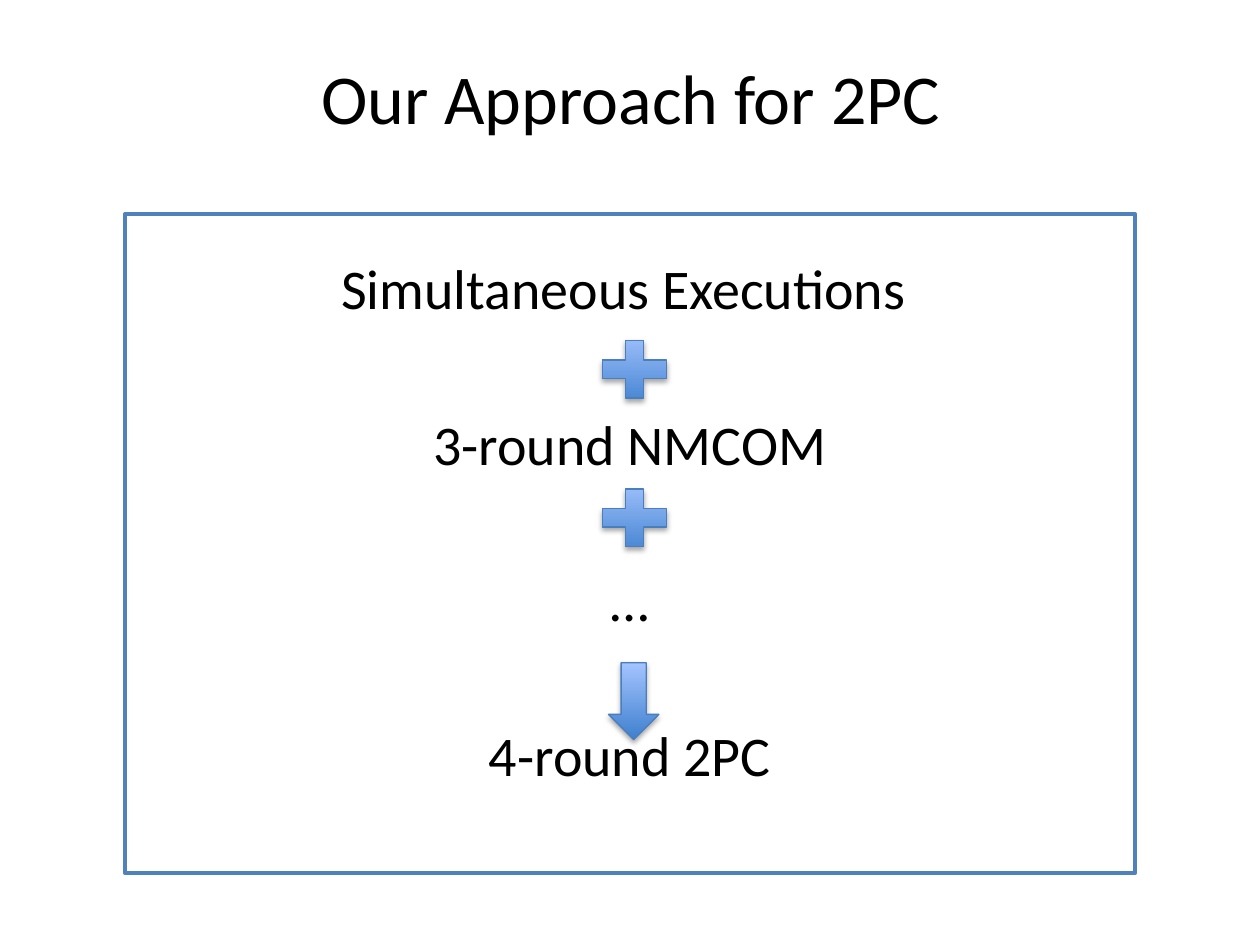
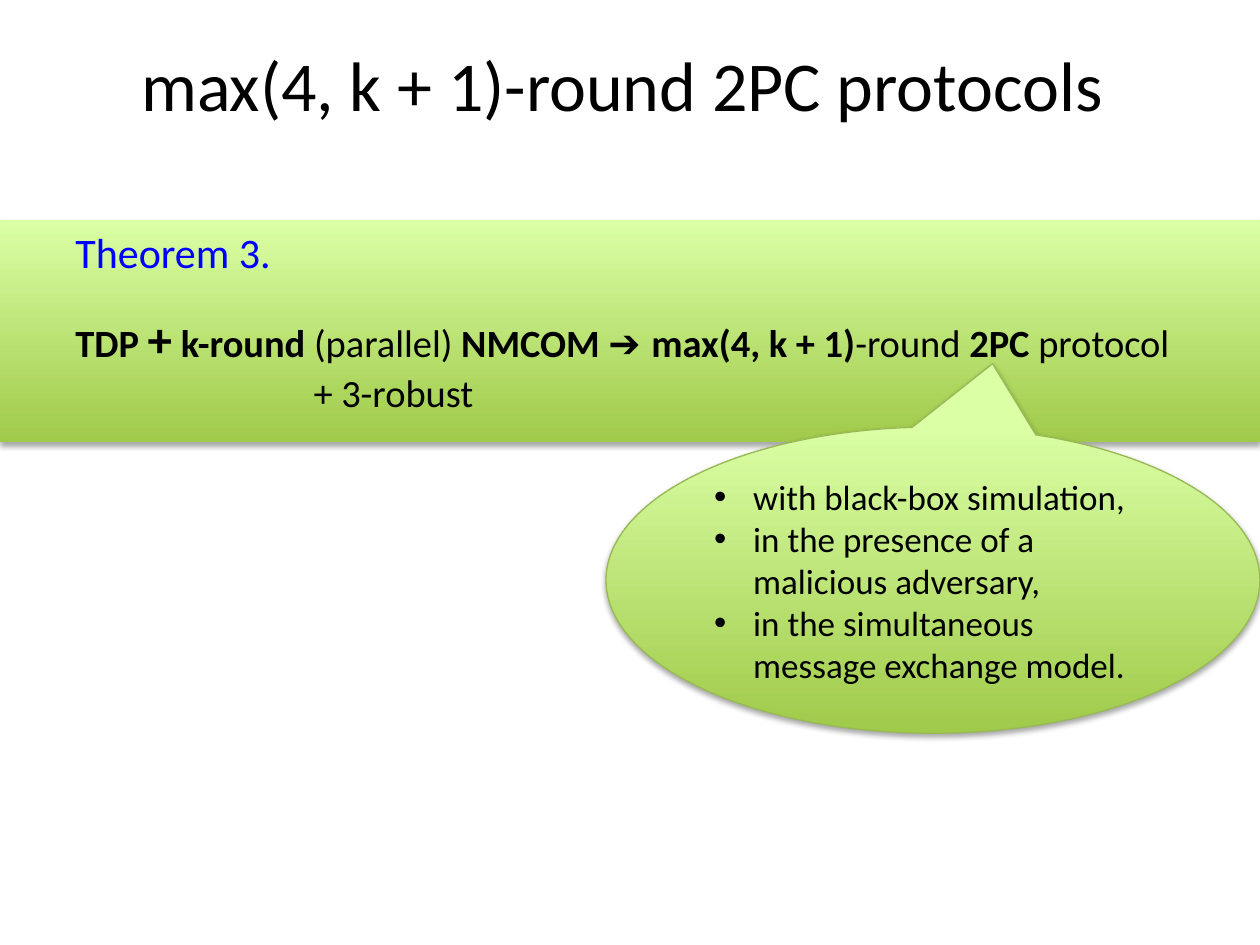
from dataclasses import dataclass

from lxml.etree import SubElement
from pptx import Presentation
from pptx.dml.color import RGBColor as RGB
from pptx.enum.shapes import MSO_SHAPE as Preset
from pptx.enum.text import MSO_ANCHOR as Anchor, PP_ALIGN as Align
from pptx.oxml.ns import qn
from pptx.util import Inches, Pt


@dataclass(frozen=True)
class Theme:
    font: str = "Calibri"
    symbol_font: str = "Arial"
    black: RGB = RGB(0, 0, 0)
    white: RGB = RGB(255, 255, 255)
    theorem_blue: RGB = RGB(0, 0, 255)
    frame_blue: RGB = RGB(0x4F, 0x81, 0xBD)
    blue_line: RGB = RGB(0x4B, 0x7E, 0xBC)
    green_line: RGB = RGB(0x98, 0xB9, 0x55)
    blue_gradient: tuple = (RGB(0x3F, 0x80, 0xCE), RGB(0xA4, 0xC4, 0xFF))
    green_gradient: tuple = (RGB(0xA0, 0xCA, 0x4A), RGB(0xDA, 0xFF, 0xA5))
    title: int = 40
    step: int = 32
    plus: int = 28
    heading: int = 24
    statement: int = 22
    callout: int = 20


theme = Theme()


def write(text_frame, lines, size, align=Align.LEFT, color=theme.black):
    """Fill a text frame with one paragraph per line."""
    text_frame.text = "\n".join(lines)
    for paragraph in text_frame.paragraphs:
        paragraph.alignment = align
        for run in paragraph.runs:
            run.font.name = theme.font
            run.font.size = Pt(size)
            run.font.color.rgb = color


def add_glossy_shape(slide, preset, box, gradient, line_color=None):
    """Add a shape with a vertical gradient and a soft shadow below."""
    shape = slide.shapes.add_shape(preset, *map(Inches, box))
    shape.fill.gradient()
    shape.fill.gradient_angle = 90
    for stop, color in zip(shape.fill.gradient_stops, gradient):
        stop.color.rgb = color
    if line_color is None:
        shape.line.fill.background()
    else:
        shape.line.color.rgb = line_color
        shape.line.width = Pt(0.75)
    shape.shadow.inherit = False
    effects = shape._element.spPr.find(qn("a:effectLst"))
    shadow = SubElement(effects, qn("a:outerShdw"), blurRad=str(Pt(3.1)),
                        dist=str(Pt(1.8)), dir="5400000", rotWithShape="0")
    shadow_color = SubElement(shadow, qn("a:srgbClr"), val="000000")
    SubElement(shadow_color, qn("a:alpha"), val="35000")
    return shape


presentation = Presentation()
presentation.slide_width, presentation.slide_height = Inches(10), Inches(7.5)

# Slides and their titles
titles = [
    ("Our Approach for 2PC", (2.45, 0.38, 5.19, 0.77), Align.LEFT, False),
    ("max(4, k + 1)-round 2PC protocols ", (0.5, 0.04, 9, 1.25), Align.CENTER, True),
]
slides = []
for text, box, align, wraps in titles:
    slide = presentation.slides.add_slide(presentation.slide_layouts[5])
    title = slide.shapes.title
    title.left, title.top, title.width, title.height = map(Inches, box)
    write(title.text_frame, [text], theme.title, align)
    title.text_frame.word_wrap = wraps
    title.text_frame.vertical_anchor = Anchor.MIDDLE
    slides.append(slide)
approach_slide, theorem_slide = slides

# Approach: frame
frame = approach_slide.shapes.add_shape(
    Preset.RECTANGLE, Inches(0.99), Inches(1.7), Inches(8.02), Inches(5.23))
frame.shadow.inherit = False
frame.fill.solid()
frame.fill.fore_color.rgb = theme.white
frame.line.color.rgb = theme.frame_blue
frame.line.width = Pt(2)

# Approach: steps, evenly spaced
steps = approach_slide.shapes.add_textbox(
    Inches(0.5), Inches(1.96), Inches(9), Inches(4.5)).text_frame
steps.word_wrap = True
write(steps, ["Simultaneous Executions ", "3-round NMCOM", "…", "4-round 2PC"],
      theme.step, Align.CENTER)
for paragraph in steps.paragraphs[1:]:
    paragraph.space_before = Pt(50.7)

# Approach: signs between the steps
for preset, box in [
    (Preset.MATH_PLUS, (4.69, 2.62, 0.69, 0.62)),
    (Preset.MATH_PLUS, (4.69, 3.8, 0.69, 0.62)),
    (Preset.DOWN_ARROW, (4.83, 5.26, 0.4, 0.61)),
]:
    add_glossy_shape(approach_slide, preset, box, theme.blue_gradient, theme.blue_line)

# Theorem: band and heading
add_glossy_shape(theorem_slide, Preset.RECTANGLE, (0, 1.75, 10, 1.76), theme.green_gradient)
heading = theorem_slide.shapes.add_textbox(
    Inches(0.5), Inches(1.75), Inches(9), Inches(0.5)).text_frame
write(heading, ["Theorem 3."], theme.heading, color=theme.theorem_blue)

# Theorem: statement with mixed weights
statement = theorem_slide.shapes.add_textbox(
    Inches(0.5), Inches(2.4), Inches(9), Inches(0.94)).text_frame
statement.word_wrap = False
for text, bold, size, font in [
    ("TDP ", True, theme.statement, theme.font),
    ("+", True, theme.plus, theme.font),
    (" ", False, theme.statement, theme.font),
    ("k-round ", True, theme.statement, theme.font),
    ("(parallel) ", False, theme.statement, theme.font),
    ("NMCOM ", True, theme.statement, theme.font),
    ("➔ ", True, theme.statement, theme.symbol_font),
    ("max(4, k + 1)", True, theme.statement, theme.font),
    ("-round ", False, theme.statement, theme.font),
    ("2PC ", True, theme.statement, theme.font),
    ("protocol", False, theme.statement, theme.font),
]:
    run = statement.paragraphs[0].add_run()
    run.text = text
    run.font.bold = bold
    run.font.size = Pt(size)
    run.font.name = font
    run.font.color.rgb = theme.black

# Theorem: callout with bulleted conditions
callout = add_glossy_shape(theorem_slide, Preset.OVAL_CALLOUT, (4.81, 3.39, 5.19, 2.43),
                           theme.green_gradient, theme.green_line)
callout.adjustments[0], callout.adjustments[1] = 0.091, -0.707
callout.text_frame.vertical_anchor = Anchor.MIDDLE
write(callout.text_frame, [
    "with black-box simulation,",
    "in the presence of a malicious adversary,",
    "in the simultaneous message exchange model.",
], theme.callout)
for paragraph in callout.text_frame.paragraphs:
    properties = paragraph._p.get_or_add_pPr()
    properties.set("marL", str(Inches(0.31)))
    properties.set("indent", str(-Inches(0.31)))
    SubElement(properties, qn("a:buFont"), typeface=theme.symbol_font)
    SubElement(properties, qn("a:buChar"), char="•")

# Theorem: extra condition
condition = theorem_slide.shapes.add_textbox(
    Inches(2.39), Inches(2.88), Inches(1.64), Inches(0.47)).text_frame
condition.word_wrap = True
write(condition, ["+ 3-robust"], theme.statement)

presentation.save("out.pptx")
